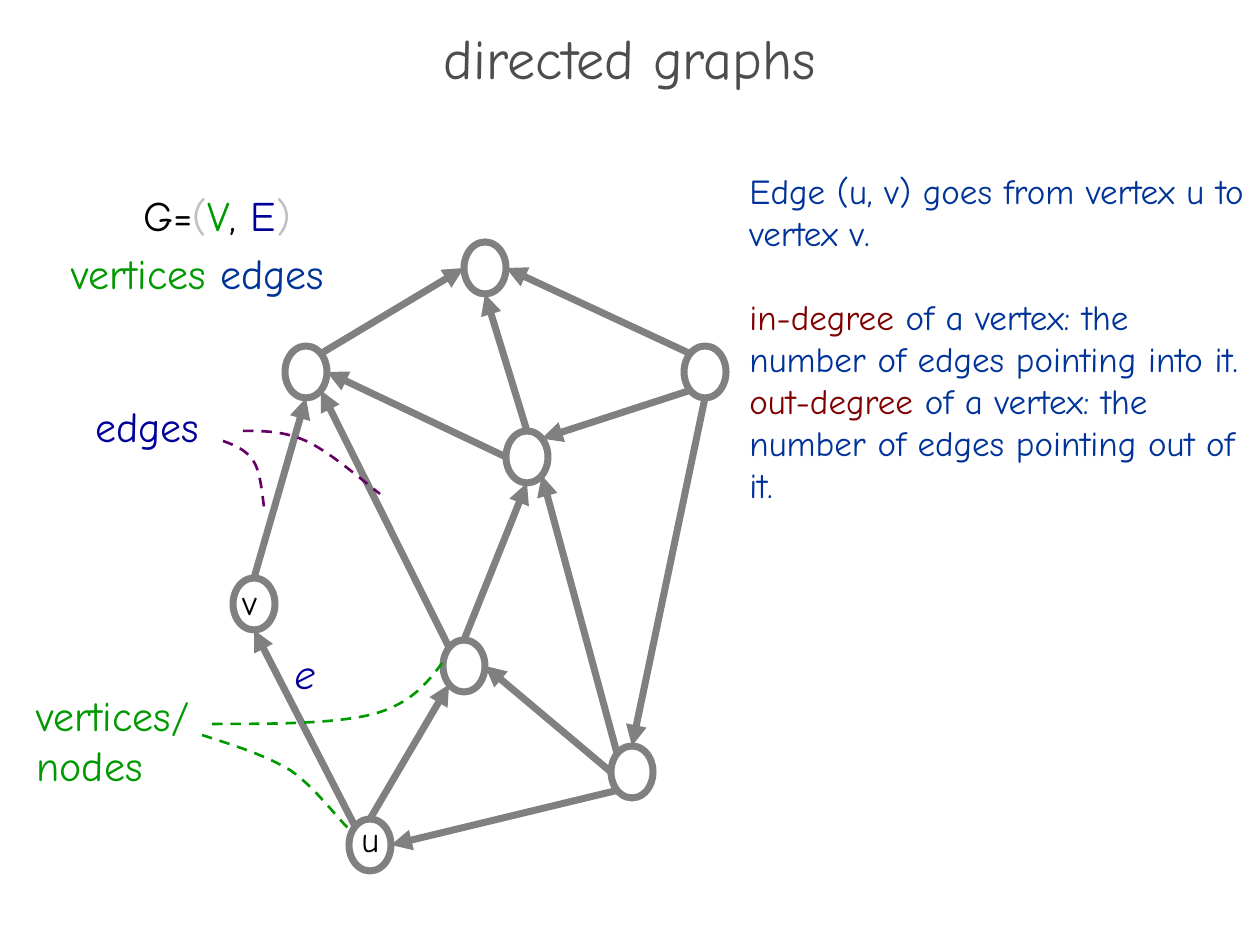
from dataclasses import dataclass
from math import sqrt

from lxml import etree
from pptx import Presentation
from pptx.dml.color import RGBColor
from pptx.enum.dml import MSO_LINE
from pptx.enum.shapes import MSO_CONNECTOR, MSO_SHAPE
from pptx.enum.text import MSO_ANCHOR, PP_ALIGN
from pptx.oxml.ns import qn
from pptx.util import Pt

PX = 914400 / 126
STRAIGHT = MSO_CONNECTOR.STRAIGHT
OVAL = MSO_SHAPE.OVAL
DASH = MSO_LINE.DASH
MIDDLE, TOP = MSO_ANCHOR.MIDDLE, MSO_ANCHOR.TOP
CENTER, LEFT = PP_ALIGN.CENTER, PP_ALIGN.LEFT

NODE_W, NODE_H = 42, 52
DIAGONAL = 1 / sqrt(2)
SITES = {
    "N": (0, -1), "S": (0, 1), "W": (-1, 0), "E": (1, 0),
    "NW": (-DIAGONAL, -DIAGONAL), "NE": (DIAGONAL, -DIAGONAL),
    "SW": (-DIAGONAL, DIAGONAL), "SE": (DIAGONAL, DIAGONAL),
}

# Node centres
NODES = {
    "top": (485, 268), "left": (306, 372), "mid": (527, 457),
    "low": (464, 666), "v": (254, 604), "right": (705, 372),
    "u": (370, 845), "corner": (632, 772),
}
# Source node and site, target node and site
EDGES = [
    ("left", "NE", "top", "W"), ("v", "N", "left", "S"),
    ("u", "NW", "v", "S"), ("corner", "SW", "u", "E"),
    ("right", "NW", "top", "E"), ("mid", "N", "top", "S"),
    ("mid", "W", "left", "E"), ("low", "NW", "left", "SE"),
    ("low", "N", "mid", "S"), ("u", "N", "low", "SW"),
    ("right", "SW", "mid", "NE"), ("corner", "W", "low", "E"),
    ("right", "S", "corner", "N"), ("corner", "NW", "mid", "SE"),
]


@dataclass(frozen=True)
class Theme:
    font: str = "Comic Neue"
    title_size: int = 32
    label_size: int = 24
    body_size: int = 20
    edge_width: float = 4
    pointer_width: float = 1.5
    title: str = "4D4D4D"
    graph: str = "808080"
    paper: str = "FFFFFF"
    text: str = "000000"
    bracket: str = "C0C0C0"
    green: str = "009900"
    navy: str = "000099"
    blue: str = "003399"
    maroon: str = "800000"
    purple: str = "660066"


def emu(px):
    return round(px * PX)


def rgb(color):
    return RGBColor.from_string(color)


def site(node, name):
    """Point on the outline of a node, named by compass direction."""
    (x, y), (dx, dy) = NODES[node], SITES[name]
    return x + dx * NODE_W / 2, y + dy * NODE_H / 2


def bezier(p0, p1, p2, p3, steps=12):
    """Points along a cubic curve, without its start."""
    for i in range(1, steps + 1):
        t = i / steps
        u = 1 - t
        yield tuple(u**3 * a + 3 * u * u * t * b + 3 * u * t * t * c + t**3 * d
                    for a, b, c, d in zip(p0, p1, p2, p3))


class Painter:
    def __init__(self, slide, theme):
        self.s = slide
        self.theme = theme

    def text(self, box, paragraphs, size, anchor=TOP, align=LEFT,
             spacing=None, italic=False, gaps=()):
        """Each paragraph is a list of (text, colour); gaps are points before each."""
        tf = self.s.shapes.add_textbox(*map(emu, box)).text_frame
        tf.word_wrap = True
        tf.vertical_anchor = anchor
        for i, runs in enumerate(paragraphs):
            p = tf.add_paragraph() if i else tf.paragraphs[0]
            p.alignment = align
            p.line_spacing = spacing
            if gaps:
                p.space_before = Pt(gaps[i])
            for words, color in runs:
                r = p.add_run()
                r.text = words
                r.font.name = self.theme.font
                r.font.size = Pt(size)
                r.font.italic = italic
                r.font.color.rgb = rgb(color)

    def node(self, x, y):
        sp = self.s.shapes.add_shape(OVAL, emu(x - NODE_W / 2), emu(y - NODE_H / 2),
                                     emu(NODE_W), emu(NODE_H))
        sp.shadow.inherit = False
        sp.fill.solid()
        sp.fill.fore_color.rgb = rgb(self.theme.paper)
        sp.line.color.rgb = rgb(self.theme.graph)
        sp.line.width = Pt(self.theme.edge_width)

    def arrow(self, start, end):
        line = self.s.shapes.add_connector(STRAIGHT, *map(emu, (*start, *end)))
        line.line.color.rgb = rgb(self.theme.graph)
        line.line.width = Pt(self.theme.edge_width)
        ln = line.line._get_or_add_ln()
        etree.SubElement(ln, qn("a:tailEnd"), type="triangle")
        etree.SubElement(ln.getparent(), qn("a:effectLst"))

    def pointer(self, points, color):
        """Dashed curve through a start and two cubic segments of three points."""
        path = [q for i in (0, 3) for q in bezier(*points[i:i + 4])]
        builder = self.s.shapes.build_freeform(*map(emu, points[0]))
        builder.add_line_segments([(emu(x), emu(y)) for x, y in path], close=False)
        sp = builder.convert_to_shape()
        sp.shadow.inherit = False
        sp.fill.background()
        sp.line.color.rgb = rgb(color)
        sp.line.width = Pt(self.theme.pointer_width)
        sp.line.dash_style = DASH


def main():
    prs = Presentation()
    prs.slide_width, prs.slide_height = emu(1260), emu(945)
    t = Theme()
    d = Painter(prs.slides.add_slide(prs.slide_layouts[6]), t)

    d.text((0, 34, 1260, 63), [[("directed graphs", t.title)]], t.title_size,
           anchor=MIDDLE, align=CENTER, spacing=0.7)

    for x, y in NODES.values():
        d.node(x, y)
    for source, leave, target, arrive in EDGES:
        d.arrow(site(source, leave), site(target, arrive))

    pointers = [
        (t.green, [(212, 724), (273, 724), (335, 724), (374, 714),
                   (412, 703), (427, 683), (443, 662)]),
        (t.green, [(202, 735), (233, 745), (265, 755), (290, 770),
                   (314, 786), (339, 820), (349, 829)]),
        (t.purple, [(243, 431), (263, 431), (284, 431), (306, 441),
                    (329, 451), (368, 485), (380, 494)]),
        (t.purple, [(223, 441), (234, 445), (247, 450), (254, 462),
                    (261, 474), (262, 494), (265, 514)]),
    ]
    for color, points in pointers:
        d.pointer(points, color)

    labels = [
        ((24, 683, 209, 165), [[("vertices/", t.green)], [("nodes", t.green)]]),
        ((83, 394, 140, 64), [[("edges", t.navy)]]),
        ((131, 183, 188, 64), [[("G=", t.text), ("(", t.bracket), ("V", t.green),
                                (", ", t.text), ("E", t.navy), (")", t.bracket)]]),
        ((59, 241, 315, 115), [[("vertices ", t.green), ("edges", t.blue)]]),
    ]
    for box, paragraphs in labels:
        d.text(box, paragraphs, t.label_size)
    d.text((282, 641, 53, 63), [[("e", t.navy)]], t.label_size, italic=True)
    d.text((349, 811, 44, 55), [[("u", t.text)]], t.body_size)
    d.text((230, 574, 43, 55), [[("v", t.text)]], t.body_size)

    d.text((737, 163, 523, 437), [
        [("Edge (u, v) goes from vertex u to vertex v.", t.blue)],
        [("in-degree ", t.maroon),
         ("of a vertex: the number of edges pointing into it.", t.blue)],
        [("out-degree ", t.maroon),
         ("of a vertex: the number of edges pointing out of it.", t.blue)],
    ], t.body_size, gaps=(0, 24, 0))

    prs.save("out.pptx")


if __name__ == "__main__":
    main()
